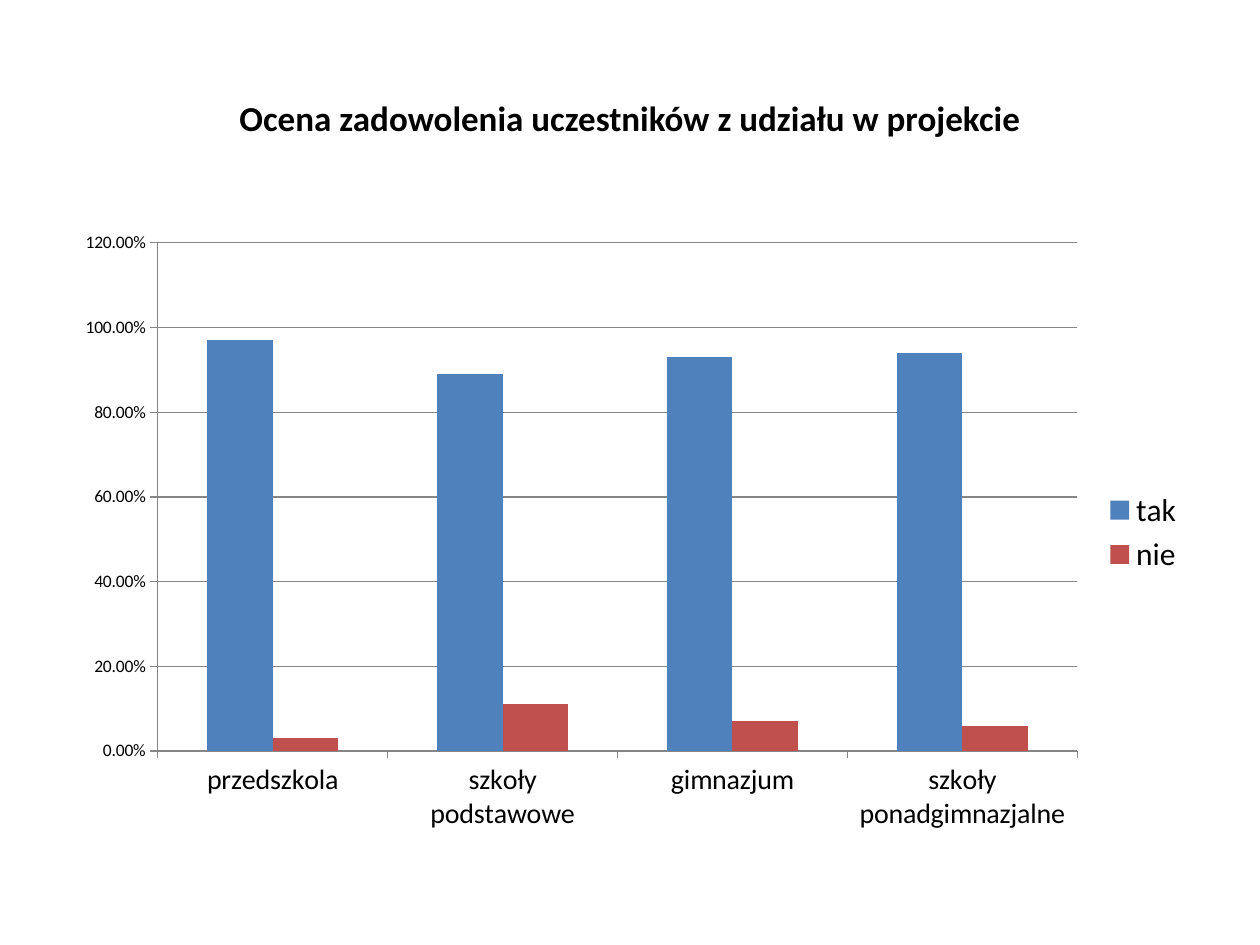
from pptx import Presentation
from pptx.chart.data import CategoryChartData
from pptx.dml.color import RGBColor
from pptx.enum.chart import XL_CHART_TYPE, XL_LEGEND_POSITION, XL_TICK_MARK
from pptx.enum.text import MSO_ANCHOR, PP_ALIGN
from pptx.util import Pt

FONT = "Calibri"
COLORS = {"text": "000000", "line": "868686", "background": "FFFFFF",
          "tak": "4F81BD", "nie": "C0504D"}
SCHOOLS = ["przedszkola", "szkoły podstawowe", "gimnazjum",
           "szkoły ponadgimnazjalne"]
ANSWERS = {"tak": (0.97, 0.89, 0.93, 0.94), "nie": (0.03, 0.11, 0.07, 0.06)}


def color(key):
    return RGBColor.from_string(COLORS[key])


def style_font(font, size, bold=False):
    font.name = FONT
    font.size = Pt(size)
    font.bold = bold
    font.color.rgb = color("text")


def write_text(frame, text, size=18, bold=False, align=PP_ALIGN.LEFT):
    frame.word_wrap = True
    frame.vertical_anchor = MSO_ANCHOR.MIDDLE
    paragraph = frame.paragraphs[0]
    paragraph.alignment = align
    run = paragraph.add_run()
    run.text = text
    style_font(run.font, size, bold)


def style_line(line):
    line.color.rgb = color("line")
    line.width = Pt(0.75)


def place_title(slide, left, top, width, height):
    title = slide.shapes.title
    title.left, title.top = Pt(left), Pt(top)
    title.width, title.height = Pt(width), Pt(height)
    write_text(title.text_frame,
               "Ocena zadowolenia uczestników z udziału w projekcie",
               size=20, bold=True, align=PP_ALIGN.CENTER)


def place_satisfaction_chart(slide, left, top, width, height):
    ratings = CategoryChartData(number_format="0.00%")
    ratings.categories = SCHOOLS
    for answer, shares in ANSWERS.items():
        ratings.add_series(answer, shares)
    chart = slide.shapes.add_chart(
        XL_CHART_TYPE.COLUMN_CLUSTERED, Pt(left), Pt(top), Pt(width),
        Pt(height), ratings).chart
    chart.has_title = False
    style_font(chart.font, 10)

    # Columns
    columns = chart.plots[0]
    columns.gap_width = 150
    columns.overlap = 0
    columns.vary_by_categories = False
    for series in columns.series:
        series.format.fill.solid()
        series.format.fill.fore_color.rgb = color(series.name)
        series.invert_if_negative = False

    # Axes
    for axis, size in ((chart.category_axis, 16), (chart.value_axis, 10)):
        axis.major_tick_mark = XL_TICK_MARK.OUTSIDE
        axis.minor_tick_mark = XL_TICK_MARK.NONE
        style_font(axis.tick_labels.font, size)
        style_line(axis.format.line)
    shares_axis = chart.value_axis
    shares_axis.minimum_scale, shares_axis.maximum_scale = 0, 1.2
    shares_axis.major_unit = 0.2
    shares_axis.has_major_gridlines = True
    style_line(shares_axis.major_gridlines.format.line)
    shares_axis.tick_labels.number_format = "0.00%"
    shares_axis.tick_labels.number_format_is_linked = False

    # Legend
    chart.has_legend = True
    chart.legend.position = XL_LEGEND_POSITION.RIGHT
    chart.legend.include_in_layout = False
    style_font(chart.legend.font, 18)


def main():
    deck = Presentation()
    deck.slide_width, deck.slide_height = Pt(720), Pt(540)
    slide = deck.slides.add_slide(deck.slide_layouts[5])
    slide.background.fill.solid()
    slide.background.fill.fore_color.rgb = color("background")
    place_title(slide, 36, 22, 648, 90)
    place_satisfaction_chart(slide, 36, 126, 648, 356.4)
    deck.save("out.pptx")


if __name__ == "__main__":
    main()
